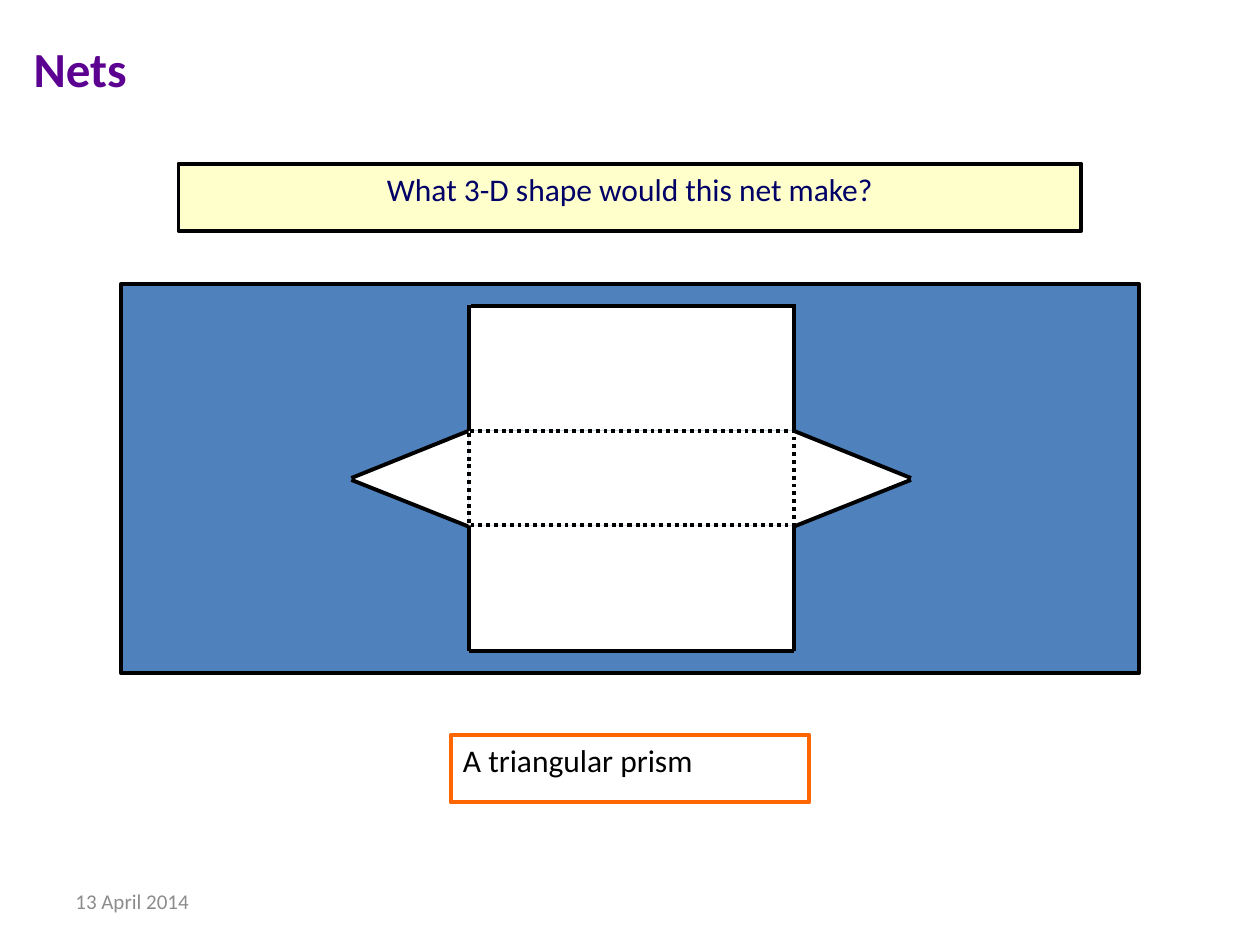
from pptx import Presentation
from pptx.dml.color import RGBColor
from pptx.enum import dml, shapes, text
from pptx.oxml.ns import qn
from pptx.util import Pt
from lxml import etree


def paint(form, fill, edge=None):
    form.shadow.inherit = False
    if fill:
        form.fill.solid()
        form.fill.fore_color.rgb = RGBColor.from_string(fill)
    else:
        form.fill.background()
    if edge:
        form.line.color.rgb = RGBColor.from_string(edge)
        form.line.width = Pt(2.25)
    else:
        form.line.fill.background()


def write(form, words, size, color, align, anchor, bold=False):
    frame = form.text_frame
    frame.word_wrap = True
    frame.vertical_anchor = anchor
    frame.text = words
    par = frame.paragraphs[0]
    par.alignment = align
    par.font.name = "Calibri"
    par.font.size = Pt(size)
    par.font.bold = bold
    par.font.color.rgb = RGBColor.from_string(color)


kind = shapes.MSO_SHAPE
side = text.PP_ALIGN
anchor = text.MSO_ANCHOR

deck = Presentation()
deck.slide_width, deck.slide_height = Pt(720), Pt(540)
slide = deck.slides.add_slide(deck.slide_layouts[5])

panel = slide.shapes.add_shape(kind.RECTANGLE, Pt(69), Pt(162.5), Pt(582), Pt(222))
paint(panel, "4F81BD", "000000")

title = slide.shapes.title
title.left, title.top, title.width, title.height = Pt(12), Pt(12), Pt(564), Pt(54)
write(title, "Nets", 28, "5B0091", side.LEFT, anchor.MIDDLE, True)

ask = slide.shapes.add_shape(kind.RECTANGLE, Pt(102), Pt(93.5), Pt(516), Pt(38.5))
paint(ask, "FFFFCC", "000000")
write(ask, "What 3-D shape would this net make?", 18, "000066", side.CENTER, anchor.TOP)

left, right = 267.8, 453.6
top, fold, crease, base = 174.2, 246.2, 300.2, 372.2
mid = (fold + crease) / 2
reach = 67
wide = right - left
tall = crease - fold
net = slide.shapes.add_group_shape().shapes

for center, turn in ((left - reach / 2, 270), (right + reach / 2, 90)):
    flap = net.add_shape(kind.ISOSCELES_TRIANGLE, Pt(center - tall / 2),
                         Pt(mid - reach / 2), Pt(tall), Pt(reach))
    flap.rotation = turn
    paint(flap, "FFFFFF")

for y in (crease, top):
    face = net.add_shape(kind.RECTANGLE, Pt(left), Pt(y), Pt(wide), Pt(fold - top))
    paint(face, "FFFFFF")

edges = [(left, base, right, base), (left + 1.4, top + 0.6, right + 1.4, top + 0.6)]
for x, tip in ((left, left - reach), (right, right + reach)):
    edges += [(tip, mid, x, fold), (tip, mid + 1, x, crease + 0.7),
              (x, top, x, fold), (x, crease, x, base)]
for edge in edges:
    line = net.add_connector(shapes.MSO_CONNECTOR.STRAIGHT, *map(Pt, edge))
    line.line.color.rgb = RGBColor.from_string("000000")
    line.line.width = Pt(2.25)
    etree.SubElement(line._element.spPr, qn("a:effectLst"))

core = net.add_shape(kind.RECTANGLE, Pt(left), Pt(fold), Pt(wide), Pt(tall))
paint(core, "FFFFFF", "000000")
core.line.dash_style = dml.MSO_LINE.ROUND_DOT

reply = slide.shapes.add_shape(kind.RECTANGLE, Pt(257.5), Pt(420), Pt(205), Pt(38.5))
paint(reply, None, "FF6600")
write(reply, "A triangular prism", 18, "000000", side.LEFT, anchor.TOP)

date = slide.shapes.add_textbox(Pt(36), Pt(500.5), Pt(168), Pt(28.75))
write(date, "13 April 2014", 12, "8C8C8C", side.LEFT, anchor.MIDDLE)

deck.save("out.pptx")
